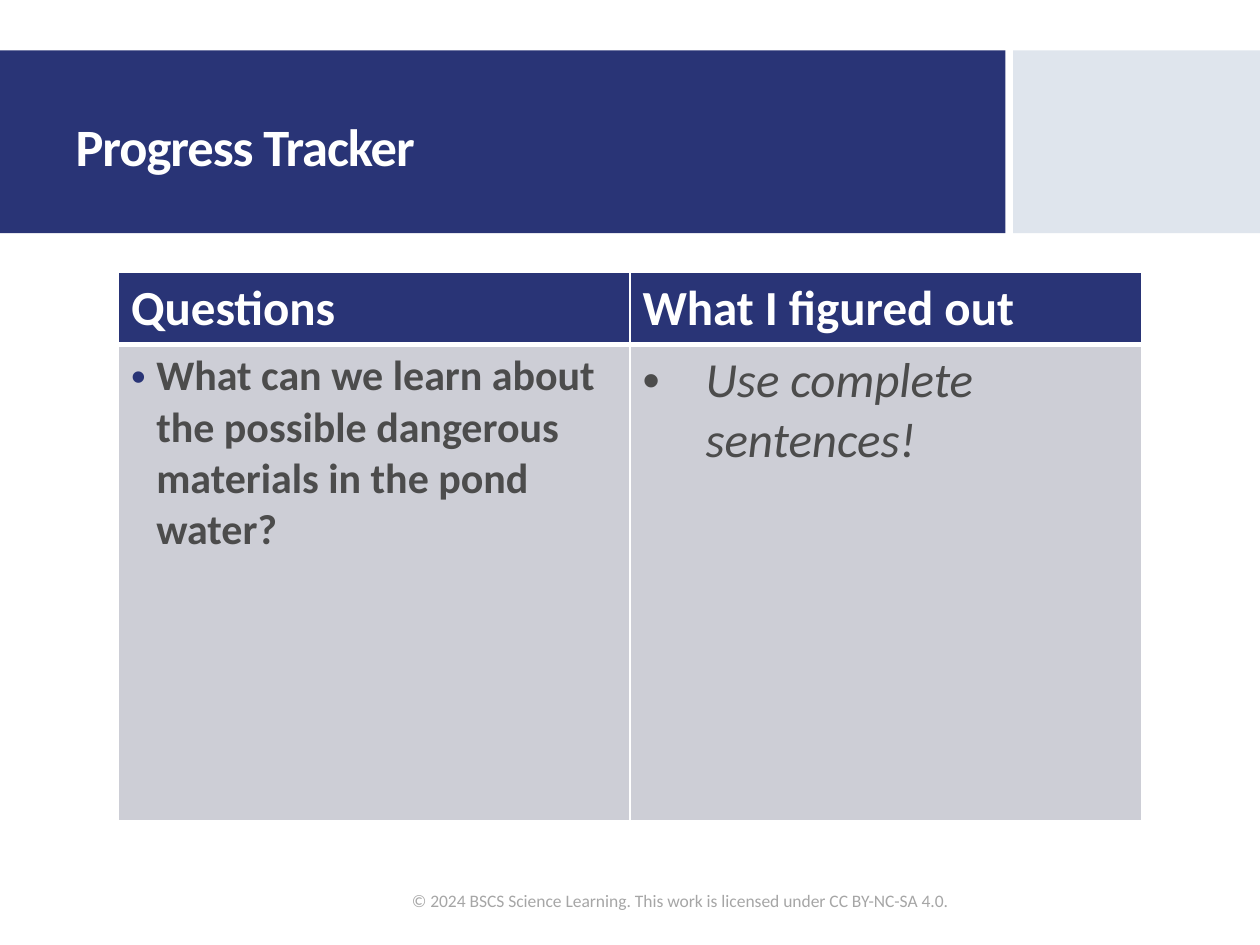
from lxml.etree import SubElement
from pptx import Presentation
from pptx.dml.color import RGBColor
from pptx.enum.shapes import MSO_SHAPE
from pptx.enum.text import MSO_ANCHOR, PP_ALIGN
from pptx.oxml.ns import qn
from pptx.util import Inches, Pt

NAVY = RGBColor(0x29, 0x34, 0x76)
PALE_BLUE = RGBColor(0xDF, 0xE5, 0xED)
CELL_GRAY = RGBColor(0xCD, 0xCE, 0xD6)
TEXT_GRAY = RGBColor(0x4C, 0x4C, 0x4C)
FOOTER_GRAY = RGBColor(0xA6, 0xA6, 0xA6)
WHITE = RGBColor(0xFF, 0xFF, 0xFF)

TITLE_FORMAT = {"size": Pt(30), "bold": True, "color": WHITE}
HEADER_FORMAT = {"size": Pt(28), "bold": True, "color": WHITE}
QUESTION_FORMAT = {"size": Pt(24), "bold": True, "color": TEXT_GRAY}
ANSWER_FORMAT = {"size": Pt(28), "bold": False, "italic": True, "color": TEXT_GRAY}
FOOTER_FORMAT = {"size": Pt(10), "color": FOOTER_GRAY}


def write_text(paragraph, text, format_values):
    run = paragraph.add_run()
    run.text = text
    run.font.name = "Calibri"
    for name, value in format_values.items():
        if name == "color":
            run.font.color.rgb = value
        else:
            setattr(run.font, name, value)
    return run


def add_bullet(paragraph, indent, color):
    properties = paragraph._p.get_or_add_pPr()
    properties.set("marL", str(indent))
    properties.set("indent", str(-indent))
    bullet_color = SubElement(properties, qn("a:buClr"))
    SubElement(bullet_color, qn("a:srgbClr"), val=str(color))
    SubElement(properties, qn("a:buFont"), typeface="Arial")
    SubElement(properties, qn("a:buChar"), char="•")


def set_borders(cell, widths):
    properties = cell._tc.get_or_add_tcPr()
    for side, width in zip("LRTB", widths):
        line = SubElement(properties, qn(f"a:ln{side}"), w=str(Pt(width)))
        fill = SubElement(line, qn("a:solidFill"))
        SubElement(fill, qn("a:srgbClr"), val=str(WHITE))


def add_band(slide, left, top, width, height, color):
    band = slide.shapes.add_shape(MSO_SHAPE.RECTANGLE, left, top, width, height)
    band.shadow.inherit = False
    band.fill.solid()
    band.fill.fore_color.rgb = color
    band.line.fill.background()


def build_heading(slide, left, top, width, height):
    # Navy band, narrow gap, pale band
    navy_width, gap = Inches(7.98), Inches(0.06)
    pale_left = left + navy_width + gap
    add_band(slide, left, top, navy_width, height, NAVY)
    add_band(slide, pale_left, top, left + width - pale_left, height, PALE_BLUE)

    # Title, brought in front of the bands
    title = slide.shapes.title
    title.left, title.top = left + Inches(0.5), top + Inches(0.18)
    title.width, title.height = Inches(6.93), Inches(1.22)
    slide.shapes._spTree.append(title._element)
    title.text_frame.vertical_anchor = MSO_ANCHOR.MIDDLE
    paragraph = title.text_frame.paragraphs[0]
    paragraph.alignment = PP_ALIGN.LEFT
    paragraph.line_spacing = 0.9
    run = write_text(paragraph, "Progress Tracker", TITLE_FORMAT)
    run.font._element.set("spc", "-60")


def build_tracker(slide, left, top, width, height):
    table = slide.shapes.add_table(2, 2, left, top, width, height).table
    header_height = Inches(0.57)
    table.rows[0].height = header_height
    table.rows[1].height = height - header_height

    # Text, format, bullet indent and bullet colour for each column
    headers = ["Questions", "What I figured out"]
    entries = [
        ("What can we learn about the possible dangerous materials in the pond water?",
         QUESTION_FORMAT, Inches(0.2), NAVY),
        ("Use complete sentences!", ANSWER_FORMAT, Inches(0.5), TEXT_GRAY),
    ]
    for column, (header, entry) in enumerate(zip(headers, entries)):
        header_cell, entry_cell = table.cell(0, column), table.cell(1, column)
        set_borders(header_cell, (1, 1, 1, 3))
        set_borders(entry_cell, (1, 1, 3, 1))
        for cell, color in ((header_cell, NAVY), (entry_cell, CELL_GRAY)):
            cell.fill.solid()
            cell.fill.fore_color.rgb = color
        write_text(header_cell.text_frame.paragraphs[0], header, HEADER_FORMAT)
        text, format_values, indent, bullet_color = entry
        paragraph = entry_cell.text_frame.paragraphs[0]
        add_bullet(paragraph, indent, bullet_color)
        write_text(paragraph, text, format_values)


def build_footer(slide, left, top, width, height):
    frame = slide.shapes.add_textbox(left, top, width, height).text_frame
    frame.word_wrap = True
    frame.vertical_anchor = MSO_ANCHOR.MIDDLE
    write_text(
        frame.paragraphs[0],
        "© 2024 BSCS Science Learning. This work is licensed under CC BY-NC-SA 4.0.",
        FOOTER_FORMAT,
    )


def main():
    presentation = Presentation()
    presentation.slide_width, presentation.slide_height = Inches(10), Inches(7.5)
    slide = presentation.slides.add_slide(presentation.slide_layouts[5])
    build_heading(slide, Inches(0), Inches(0.4), Inches(10), Inches(1.45))
    build_tracker(slide, Inches(0.94), Inches(2.16), Inches(8.12), Inches(4.35))
    build_footer(slide, Inches(3.17), Inches(6.95), Inches(4.85), Inches(0.4))
    presentation.save("out.pptx")


if __name__ == "__main__":
    main()
